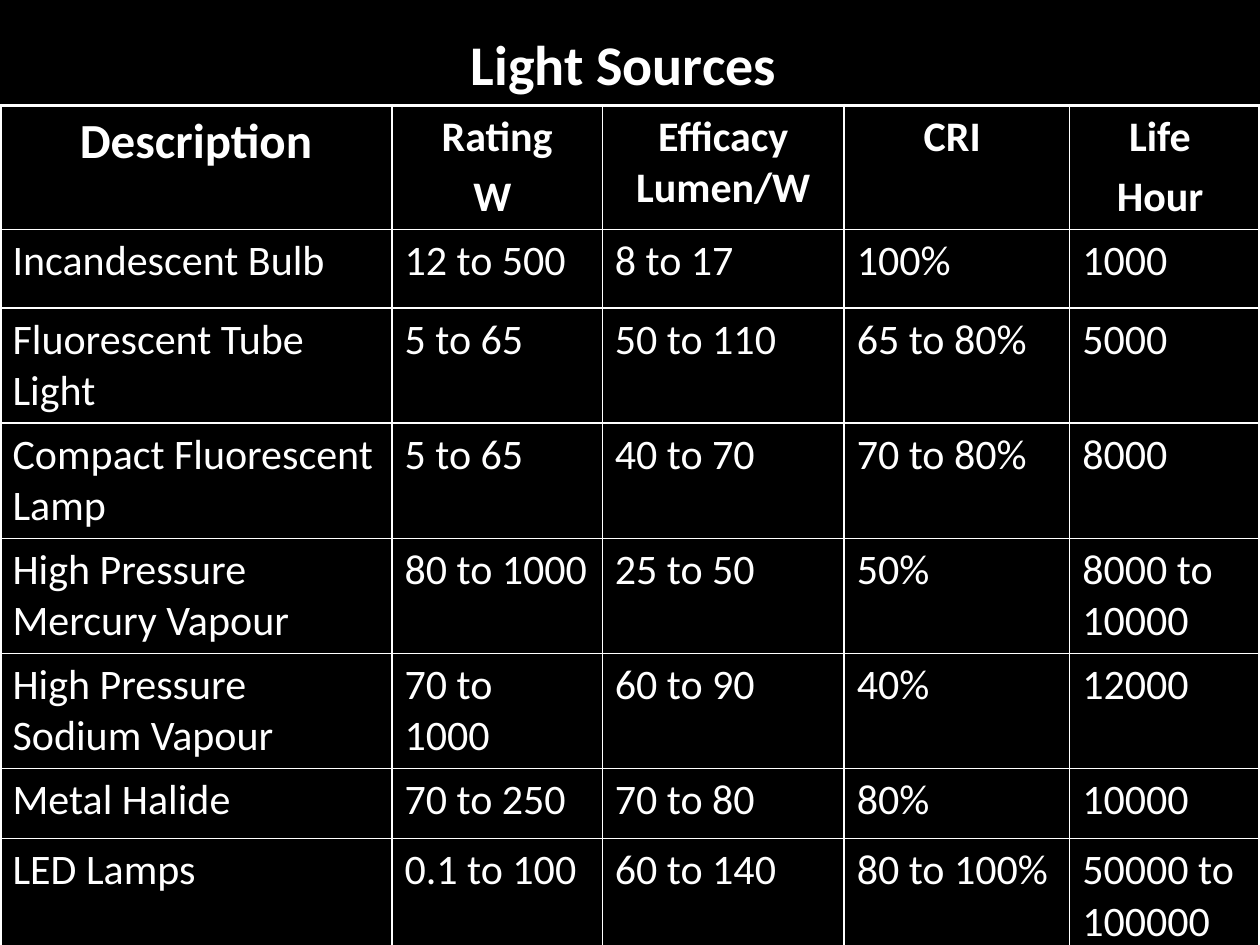
from dataclasses import dataclass

from lxml import etree
from pptx import Presentation
from pptx.dml.color import RGBColor
from pptx.enum.text import MSO_ANCHOR, PP_ALIGN
from pptx.oxml.ns import qn
from pptx.util import Pt

CENTER = PP_ALIGN.CENTER
LEFT = PP_ALIGN.LEFT
MIDDLE = MSO_ANCHOR.MIDDLE


@dataclass(frozen=True)
class Theme:
    background: str = "000000"
    ink: str = "FFFFFF"
    font: str = "Calibri"
    title_size: float = 32
    lead_size: float = 28
    body_size: float = 24
    outer_line: float = 2.25
    inner_line: float = 1


THEME = Theme()

COLUMN_WIDTHS = [224, 120.2, 138.2, 128.9, 108.7]
ROW_HEIGHTS = [70.8, 45, 65.8, 65.8, 65.8, 65.8, 40, 61]
ROWS = [
    ["Description", "Rating\nW ", "Efficacy Lumen/W", "CRI ", "Life \nHour "],
    ["Incandescent Bulb", "12 to 500", "8 to 17", "100%", "1000"],
    ["Fluorescent Tube Light", "5 to 65", "50 to 110", "65 to 80%", "5000"],
    ["Compact Fluorescent Lamp", "5 to 65", "40 to 70", "70 to 80%", "8000"],
    ["High Pressure Mercury Vapour", "80 to 1000", "25 to 50", "50%", "8000 to 10000"],
    ["High Pressure Sodium Vapour", "70 to\v1000", "60 to 90", "40%", "12000"],
    ["Metal Halide", "70 to 250", "70 to 80", "80%", "10000"],
    ["LED Lamps", "0.1 to 100", "60 to 140", "80 to 100%", "50000 to 100000"],
]


def format_text(frame, size, bold, align):
    for index, para in enumerate(frame.paragraphs):
        para.alignment = align
        para.space_before = Pt(0.2 * size if index else 0)
        for span in para.runs:
            span.font.name = THEME.font
            span.font.size = Pt(size)
            span.font.bold = bold
            span.font.color.rgb = RGBColor.from_string(THEME.ink)


def draw_borders(cell, outer_edges):
    properties = cell._tc.get_or_add_tcPr()
    for edge, is_outer in zip("LRTB", outer_edges):
        width = THEME.outer_line if is_outer else THEME.inner_line
        line = etree.SubElement(properties, qn(f"a:ln{edge}"), w=str(Pt(width)))
        fill = etree.SubElement(line, qn("a:solidFill"))
        etree.SubElement(fill, qn("a:srgbClr"), val=THEME.ink)


def add_title(page, left, top, width, height):
    box = page.shapes.add_textbox(Pt(left), Pt(top), Pt(width), Pt(height))
    frame = box.text_frame
    frame.word_wrap = True
    frame.vertical_anchor = MIDDLE
    frame.text = "Light Sources "
    format_text(frame, THEME.title_size, True, CENTER)


def add_light_table(page, left, top, width, height):
    last_row, last_column = len(ROWS) - 1, len(COLUMN_WIDTHS) - 1
    table = page.shapes.add_table(
        len(ROWS), len(COLUMN_WIDTHS), Pt(left), Pt(top), Pt(width), Pt(height)
    ).table
    table.first_row = False
    table.horz_banding = False
    for column, share in zip(table.columns, COLUMN_WIDTHS):
        column.width = Pt(width * share / sum(COLUMN_WIDTHS))
    for row, share in zip(table.rows, ROW_HEIGHTS):
        row.height = Pt(height * share / sum(ROW_HEIGHTS))
    for r, texts in enumerate(ROWS):
        for c, text in enumerate(texts):
            cell = table.cell(r, c)
            is_header = r == 0
            size = THEME.lead_size if is_header and c == 0 else THEME.body_size
            cell.text_frame.text = text
            format_text(cell.text_frame, size, is_header, CENTER if is_header else LEFT)
            draw_borders(cell, (c == 0, c == last_column, r == 0, r == last_row))
            cell.fill.background()


def main():
    deck = Presentation()
    deck.slide_width, deck.slide_height = Pt(720), Pt(540)
    page = deck.slides.add_slide(deck.slide_layouts[6])
    page.background.fill.solid()
    page.background.fill.fore_color.rgb = RGBColor.from_string(THEME.background)
    add_title(page, 0, 0, 720, 72)
    add_light_table(page, 0, 60.3, 720, 480)
    deck.save("out.pptx")


if __name__ == "__main__":
    main()
